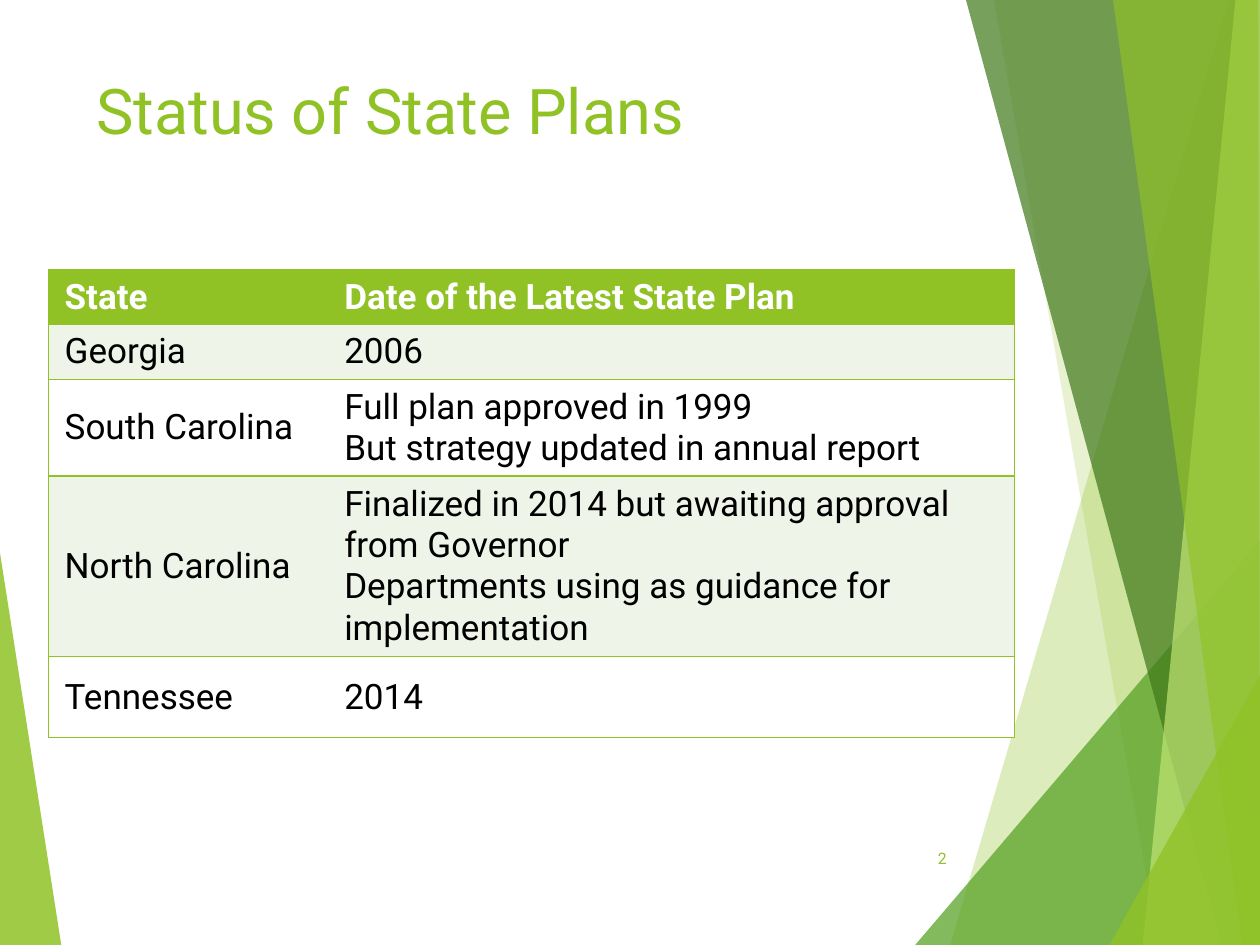
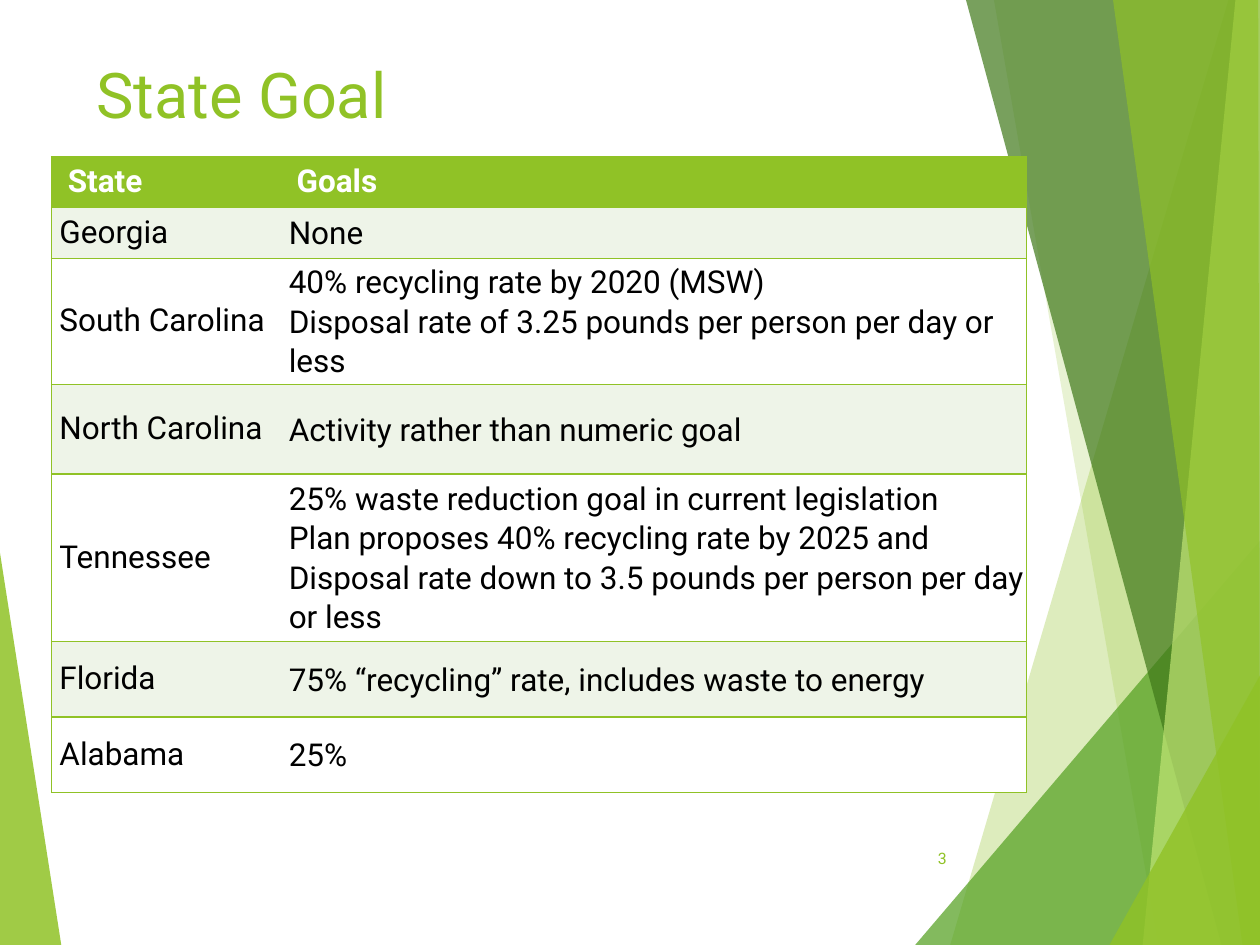
"""Build two slides that compare state waste plans and goals."""
from dataclasses import dataclass

from lxml import etree
from pptx import Presentation
from pptx.dml.color import RGBColor
from pptx.enum.text import MSO_ANCHOR, PP_ALIGN
from pptx.oxml.ns import qn
from pptx.slide import Slide
from pptx.table import _Cell
from pptx.text.text import TextFrame
from pptx.util import Pt

GREEN = RGBColor(0x90, 0xC2, 0x26)
MID_GREEN = RGBColor(0x54, 0xA0, 0x21)
DARK_GREEN = RGBColor(0x3F, 0x78, 0x19)
LIME = RGBColor(0xC0, 0xE4, 0x74)
PALE = RGBColor(0xEE, 0xF4, 0xE8)
WHITE = RGBColor(0xFF, 0xFF, 0xFF)
BLACK = RGBColor(0x00, 0x00, 0x00)
TOP, MIDDLE = MSO_ANCHOR.TOP, MSO_ANCHOR.MIDDLE
LEFT, RIGHT = PP_ALIGN.LEFT, PP_ALIGN.RIGHT

FONT = "Roboto"
WIDTH, HEIGHT = 720, 540
PLAIN_TABLE = "{2D5ABB26-0587-4C30-8999-92F81FD0307C}"
INSET, WIDE_INSET, VERTICAL_INSET = 4.5, 9.25, 3.6


@dataclass(frozen=True)
class Band:
    """A translucent polygon of the slide decoration."""

    points: tuple[tuple[float, float], ...]
    color: RGBColor
    opacity: int


@dataclass(frozen=True)
class Row:
    """One table row with its height in points."""

    height: float
    state: str
    detail: str


@dataclass(frozen=True)
class StateSlide:
    """The content and measures of one table slide."""

    number: int
    title: str
    title_top: float
    title_height: float
    table_left: float
    table_top: float
    columns: tuple[float, float]
    size: float
    state_inset: float
    detail_inset: float
    detail_vertical_inset: float
    detail_spacing: float
    rows: tuple[Row, ...]


BANDS = (
    Band(((0, 316), (35.3, HEIGHT), (0, HEIGHT)), GREEN, 85),
    Band(((702, 0), (543, HEIGHT), (WIDTH, HEIGHT), (WIDTH, 0)), GREEN, 30),
    Band(((567.5, 0), (661.5, HEIGHT), (WIDTH, HEIGHT), (WIDTH, 0)), GREEN, 20),
    Band(((522.75, HEIGHT), (WIDTH, 309), (WIDTH, HEIGHT)), MID_GREEN, 72),
    Band(((552.25, 0), (698.5, HEIGHT), (WIDTH, HEIGHT), (WIDTH, 0)), DARK_GREEN, 70),
    Band(((706.25, 0), (653, HEIGHT), (WIDTH, HEIGHT), (WIDTH, 0)), LIME, 70),
    Band(((636, 0), (709.75, HEIGHT), (WIDTH, HEIGHT), (718.75, 0)), GREEN, 65),
    Band(((634.5, HEIGHT), (WIDTH, 386), (WIDTH, HEIGHT)), GREEN, 80),
)

STATE_SLIDES = (
    StateSlide(
        number=2, title="Status of State Plans", title_top=37.5, title_height=77,
        table_left=27.75, table_top=154.25, columns=(164.5, 387.5), size=20,
        state_inset=WIDE_INSET, detail_inset=INSET,
        detail_vertical_inset=VERTICAL_INSET, detail_spacing=1,
        rows=(
            Row(30.75, "State", "Date of the Latest State Plan"),
            Row(30.75, "Georgia", "2006"),
            Row(54.25, "South Carolina",
                "Full plan approved in 1999\nBut strategy updated in annual report"),
            Row(101, "North Carolina",
                "Finalized in 2014 but awaiting approval from Governor\n"
                "Departments using as guidance for implementation"),
            Row(46.25, "Tennessee", "2014"),
        ),
    ),
    StateSlide(
        number=3, title="State Goal", title_top=28, title_height=60,
        table_left=29.5, table_top=89.75, columns=(135.5, 421.5), size=18,
        state_inset=INSET, detail_inset=0,
        detail_vertical_inset=0, detail_spacing=1.07,
        rows=(
            Row(28.5, "State", "Goals"),
            Row(29, "Georgia", "None"),
            Row(72, "South Carolina",
                "40% recycling rate by 2020 (MSW)\n"
                "Disposal rate of 3.25 pounds per person per day or less"),
            Row(51.25, "North Carolina", "Activity rather than numeric goal"),
            Row(95.75, "Tennessee",
                "25% waste reduction goal in current legislation\n"
                "Plan proposes 40% recycling rate by 2025 and\n"
                "Disposal rate down to 3.5 pounds per person per day or less"),
            Row(43.25, "Florida", "75% “recycling” rate, includes waste to energy"),
            Row(43.25, "Alabama", "25%"),
        ),
    ),
)


def write_text(frame: TextFrame, text: str, *, size: float, color: RGBColor = BLACK,
               bold: bool = False, align: PP_ALIGN = LEFT, spacing: float = 1) -> None:
    """Write each line of the text as a formatted paragraph."""
    frame.word_wrap = True
    for index, line in enumerate(text.split("\n")):
        para = frame.add_paragraph() if index else frame.paragraphs[0]
        para.alignment = align
        para.line_spacing = spacing
        span = para.add_run()
        span.text = line
        span.font.name = FONT
        span.font.size = Pt(size)
        span.font.bold = bold
        span.font.color.rgb = color


def add_text_box(page: Slide, left: float, top: float, width: float, height: float,
                 anchor: MSO_ANCHOR) -> TextFrame:
    """Add an empty text box and return its frame."""
    box = page.shapes.add_textbox(Pt(left), Pt(top), Pt(width), Pt(height))
    box.text_frame.vertical_anchor = anchor
    return box.text_frame


def add_band(page: Slide, band: Band) -> None:
    """Draw one translucent band."""
    start, *others = band.points
    builder = page.shapes.build_freeform(*start, scale=Pt(1))
    builder.add_line_segments(others, close=True)
    shape = builder.convert_to_shape()
    shape.shadow.inherit = False
    shape.line.fill.background()
    shape.fill.solid()
    shape.fill.fore_color.rgb = band.color
    color_element = shape.fill._xPr.find(qn("a:solidFill"))[0]
    etree.SubElement(color_element, qn("a:alpha"), val=str(band.opacity * 1000))


def add_borders(cell: _Cell, sides: str) -> None:
    """Give the named sides of a cell a green line."""
    properties = cell._tc.get_or_add_tcPr()
    for side in sides:
        line = etree.SubElement(properties, qn(f"a:ln{side}"), w=str(Pt(1)))
        fill = etree.SubElement(line, qn("a:solidFill"))
        etree.SubElement(fill, qn("a:srgbClr"), val=str(GREEN))


def set_insets(cell: _Cell, left: float, right: float, vertical: float) -> None:
    """Set the inner margins of a cell."""
    cell.margin_left, cell.margin_right = Pt(left), Pt(right)
    cell.margin_top = cell.margin_bottom = Pt(vertical)


def add_state_table(page: Slide, content: StateSlide) -> None:
    """Add the table with a header and alternating row fills."""
    table = page.shapes.add_table(
        len(content.rows), len(content.columns), Pt(content.table_left),
        Pt(content.table_top), Pt(sum(content.columns)),
        Pt(sum(row.height for row in content.rows))).table
    table.horz_banding = False
    table._tbl.tblPr.find(qn("a:tableStyleId")).text = PLAIN_TABLE
    for column, width in zip(table.columns, content.columns):
        column.width = Pt(width)
    for index, row in enumerate(content.rows):
        table.rows[index].height = Pt(row.height)
        header = index == 0
        state, detail = table.cell(index, 0), table.cell(index, 1)
        set_insets(state, WIDE_INSET if header else content.state_inset,
                   INSET, VERTICAL_INSET)
        if header:
            set_insets(detail, INSET, INSET, VERTICAL_INSET)
        else:
            set_insets(detail, content.detail_inset, content.detail_inset,
                       content.detail_vertical_inset)
        detail_spacing = 1 if header else content.detail_spacing
        for cell, text, sides, spacing in (
                (state, row.state, "LTB", 1),
                (detail, row.detail, "RTB", detail_spacing)):
            add_borders(cell, sides)
            cell.fill.solid()
            cell.fill.fore_color.rgb = GREEN if header else PALE if index % 2 else WHITE
            cell.vertical_anchor = MIDDLE
            write_text(cell.text_frame, text, size=content.size, bold=header,
                       color=WHITE if header else BLACK, spacing=spacing)


def add_state_slide(deck: Presentation, content: StateSlide) -> None:
    """Add one slide with bands, title, table and number."""
    page = deck.slides.add_slide(deck.slide_layouts[6])
    for band in BANDS:
        add_band(page, band)
    title = add_text_box(page, 48, content.title_top, 500, content.title_height, TOP)
    write_text(title, content.title, size=36, color=GREEN)
    add_state_table(page, content)
    number = add_text_box(page, 507.5, 476, 40.5, 28.75, MIDDLE)
    write_text(number, str(content.number), size=9, color=GREEN, align=RIGHT)


def main() -> None:
    """Build and save the deck."""
    deck = Presentation()
    deck.slide_width, deck.slide_height = Pt(WIDTH), Pt(HEIGHT)
    for content in STATE_SLIDES:
        add_state_slide(deck, content)
    deck.save("out.pptx")


if __name__ == "__main__":
    main()
